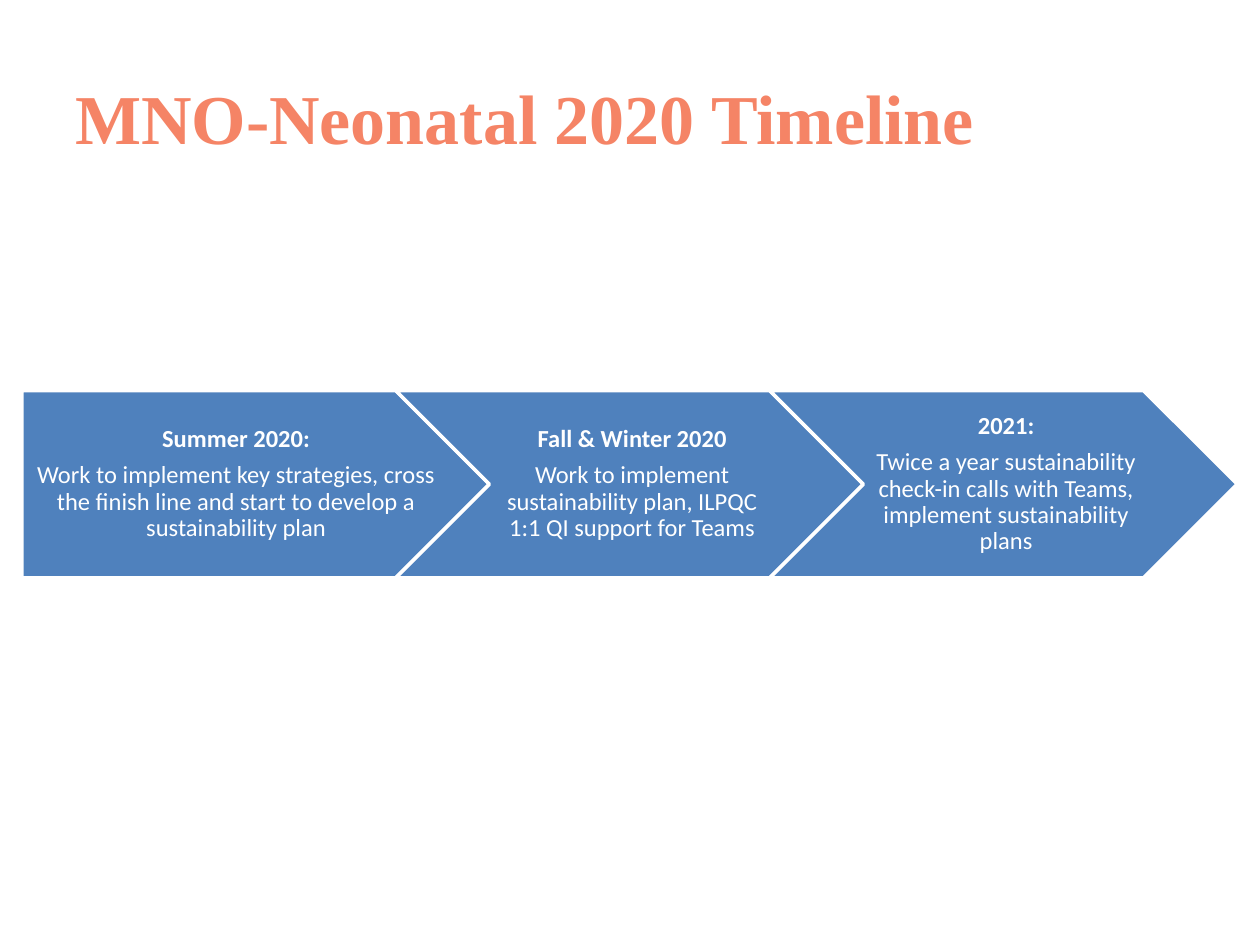
from pptx import Presentation
from pptx.dml.color import RGBColor
from pptx.enum.shapes import MSO_SHAPE as Shape
from pptx.enum.text import MSO_ANCHOR as Anchor, PP_ALIGN as Align
from pptx.util import Pt

WHITE = "FFFFFF"
BLUE = "4F81BD"
CORAL = "F58466"

STEPS = [
    ("Summer 2020:",
     "Work to implement key strategies, cross the finish line and start "
     "to develop a sustainability plan"),
    ("Fall & Winter 2020",
     "Work to implement sustainability plan, ILPQC 1:1 QI support for Teams"),
    ("2021:",
     "Twice a year sustainability check-in calls with Teams, implement "
     "sustainability plans"),
]


def color(hex_text):
    return RGBColor.from_string(hex_text)


def set_font(para, name, size, hex_text, bold):
    font = para.font
    font.name, font.size, font.bold = name, Pt(size), bold
    font.color.rgb = color(hex_text)


def add_title(page, text, left, top, width, height):
    box = page.shapes.add_textbox(Pt(left), Pt(top), Pt(width), Pt(height))
    frame = box.text_frame
    frame.word_wrap = True
    frame.vertical_anchor = Anchor.MIDDLE
    para = frame.paragraphs[0]
    para.text = text
    set_font(para, "Times New Roman", 40, CORAL, True)


def add_step(page, kind, texts, inset, left, top, width, height):
    """Place one arrow with a bold heading above its description."""
    arrow = page.shapes.add_shape(kind, Pt(left), Pt(top), Pt(width), Pt(height))
    arrow.shadow.inherit = False
    arrow.fill.solid()
    arrow.fill.fore_color.rgb = color(BLUE)
    arrow.line.color.rgb = color(WHITE)
    arrow.line.width = Pt(2)

    frame = arrow.text_frame
    frame.word_wrap = True
    frame.vertical_anchor = Anchor.MIDDLE
    frame.margin_left, frame.margin_right = Pt(inset), Pt(1.5)
    frame.margin_top = frame.margin_bottom = Pt(3)
    for index, text in enumerate(texts):
        para = frame.add_paragraph() if index else frame.paragraphs[0]
        para.text = text
        para.alignment = Align.CENTER
        para.line_spacing = 0.9
        para.space_after = Pt(5.5)
        set_font(para, "Calibri", 14, WHITE, index == 0)


def add_timeline(page, steps, left, top, width, height):
    """Fill the box with arrows, each overlapping the next by a fifth."""
    advance = 0.8
    arrow_width = width / (1 + advance * (len(steps) - 1))
    for index, texts in enumerate(steps):
        kind, inset = (Shape.CHEVRON, 4.5) if index else (Shape.PENTAGON, 6)
        add_step(page, kind, texts, inset,
                 left + index * advance * arrow_width, top, arrow_width, height)


def main():
    deck = Presentation()
    deck.slide_width, deck.slide_height = Pt(720), Pt(540)
    page = deck.slides.add_slide(deck.slide_layouts[6])
    add_title(page, "MNO-Neonatal 2020 Timeline", 36, 21.6, 648, 90)
    add_timeline(page, STEPS, 12.5, 223.2, 694.5, 107)
    deck.save("out.pptx")


if __name__ == "__main__":
    main()
